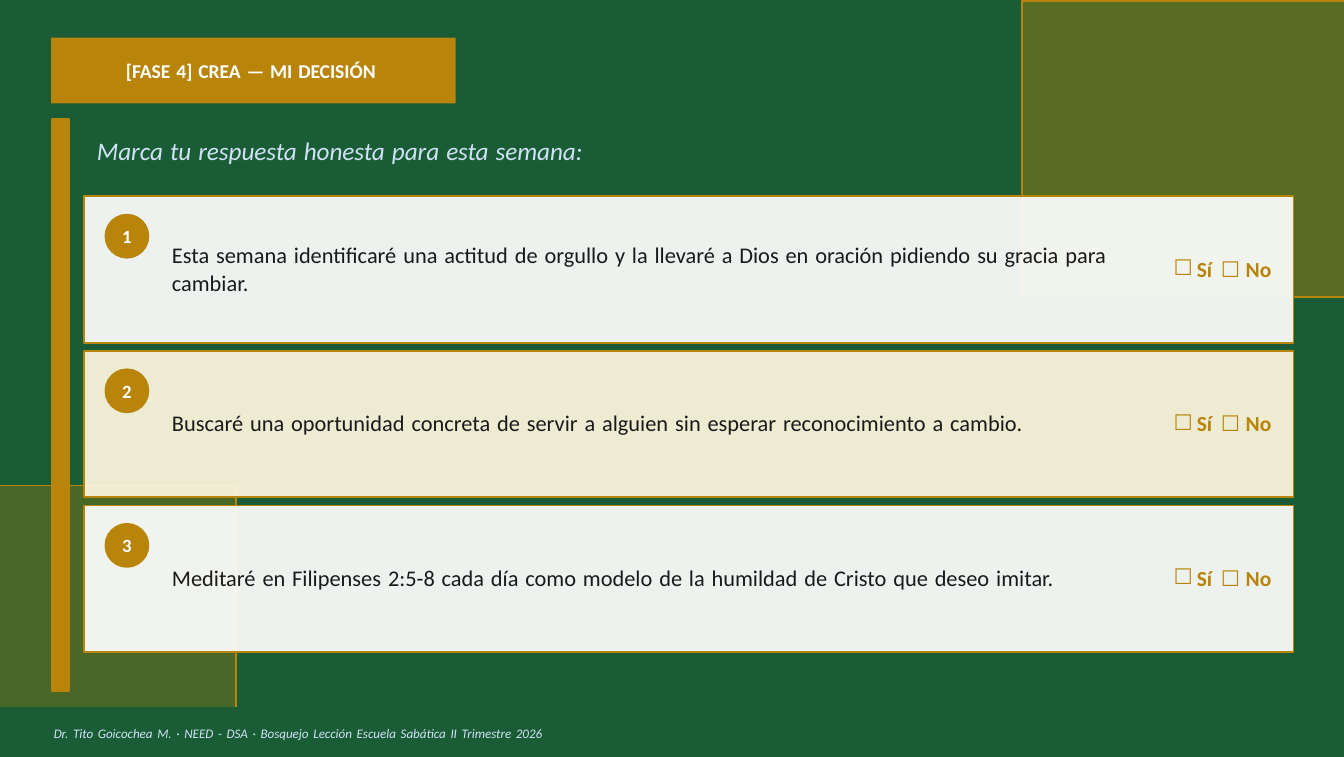
from dataclasses import dataclass

from lxml import etree
from pptx import Presentation
from pptx import util as u
from pptx.dml import color
from pptx.enum import shapes, text
from pptx.oxml import ns

Pt = u.Pt
GREEN, GOLD, WHITE = "1A5C36", "B8850A", "FFFFFF"
ICE, INK, CREAM = "D0E3F5", "1A1A1A", "FFF8E0"
RECT, OVAL = shapes.MSO_SHAPE.RECTANGLE, shapes.MSO_SHAPE.OVAL
LEFT, CENTER = text.PP_ALIGN.LEFT, text.PP_ALIGN.CENTER
SLIDE_W, SLIDE_H = 720, 405.4
CARD_LEFT, CARD_TOP, CARD_W, CARD_H, CARD_PITCH = 45, 105.1, 648, 78.5, 82.8


@dataclass(frozen=True)
class Box:
    left: float
    top: float
    width: float
    height: float

    def lengths(self) -> tuple:
        return Pt(self.left), Pt(self.top), Pt(self.width), Pt(self.height)


@dataclass(frozen=True)
class Commitment:
    number: int
    statement: str
    fill: str


def rgb(value: str) -> color.RGBColor:
    return color.RGBColor.from_string(value)


def add_block(slide, box: Box, fill: str, alpha=100, line=None, kind=RECT):
    block = slide.shapes.add_shape(kind, *box.lengths())
    block.shadow.inherit = False
    block.fill.solid()
    block.fill.fore_color.rgb = rgb(fill)
    if alpha < 100:
        solid = block.fill._xPr.find(ns.qn("a:solidFill"))
        etree.SubElement(solid[0], ns.qn("a:alpha"), val=str(alpha * 1000))
    if line:
        block.line.color.rgb = rgb(line)
        block.line.width = Pt(1)
    else:
        block.line.fill.background()
    return block


def add_outline(slide, points: list) -> None:
    start, *rest = [(Pt(x), Pt(y)) for x, y in points]
    builder = slide.shapes.build_freeform(*start)
    builder.add_line_segments(rest, close=False)
    outline = builder.convert_to_shape()
    outline.shadow.inherit = False
    outline.fill.background()
    outline.line.color.rgb = rgb(GOLD)
    outline.line.width = Pt(1)


def add_run(paragraph, words: str, *, size, ink, bold=False, italic=False,
            font="Calibri", spacing=0) -> None:
    run = paragraph.add_run()
    run.text = words
    run.font.name = font
    run.font.size = Pt(size)
    run.font.bold = bold
    run.font.italic = italic
    run.font.color.rgb = rgb(ink)
    if spacing:
        run.font._element.set("spc", str(round(spacing * 100)))


def prepare_frame(holder, indent=0, wrap=True):
    frame = holder.text_frame
    frame.margin_left = Pt(indent)
    frame.margin_top = frame.margin_right = frame.margin_bottom = 0
    frame.word_wrap = wrap
    frame.vertical_anchor = text.MSO_ANCHOR.MIDDLE
    return frame


def write(holder, words: str, *, align=LEFT, indent=0, gap=0.9, leading=None, **style) -> None:
    paragraph = prepare_frame(holder, indent).paragraphs[0]
    paragraph.alignment = align
    if leading:
        paragraph.line_spacing = Pt(leading)
    for position, word in enumerate(words.split(" ")):
        if position:
            add_run(paragraph, " ", spacing=gap, **style)
        add_run(paragraph, word, **style)


def add_answer(slide, box: Box) -> None:
    answer = slide.shapes.add_textbox(*box.lengths())
    paragraph = prepare_frame(answer, wrap=False).paragraphs[0]
    properties = paragraph._p.get_or_add_pPr()
    properties.set("marL", str(Pt(13.5)))
    properties.set("indent", str(Pt(-12.5)))
    etree.SubElement(properties, ns.qn("a:buFont"), typeface="Karla")
    etree.SubElement(properties, ns.qn("a:buChar"), char="☐")
    tabs = etree.SubElement(properties, ns.qn("a:tabLst"))
    etree.SubElement(tabs, ns.qn("a:tab"), pos=str(Pt(13.5)), algn="l")
    style = dict(size=11.5, ink=GOLD, bold=True)
    add_run(paragraph, "Sí", **style)
    add_run(paragraph, " ", spacing=2, **style)
    add_run(paragraph, "☐ ", font="Karla", **style)
    add_run(paragraph, "No", **style)


def add_commitment(slide, commitment: Commitment) -> None:
    top = CARD_TOP + CARD_PITCH * (commitment.number - 1)
    add_block(slide, Box(CARD_LEFT, top, CARD_W, CARD_H), commitment.fill, 92, GOLD)
    badge = add_block(slide, Box(56.5, top + 9.9, 23, 23), GOLD, line=GOLD, kind=OVAL)
    write(badge, str(commitment.number), align=CENTER, size=10, ink=WHITE, bold=True)
    statement = slide.shapes.add_textbox(*Box(91.4, top - 0.9, 514, CARD_H).lengths())
    write(statement, commitment.statement, indent=0.7, leading=15, size=12, ink=INK)
    add_answer(slide, Box(627.7, top - 0.5, 55, CARD_H))


def main() -> None:
    deck = Presentation()
    deck.slide_width, deck.slide_height = Pt(SLIDE_W), Pt(SLIDE_H)
    slide = deck.slides.add_slide(deck.slide_layouts[6])
    slide.background.fill.solid()
    slide.background.fill.fore_color.rgb = rgb(GREEN)

    add_block(slide, Box(547.6, 0, 172.4, 159), GOLD, 40)
    add_outline(slide, [(SLIDE_W, 0.3), (547.6, 0.3), (547.6, 159)])
    add_outline(slide, [(CARD_LEFT + CARD_W, 159), (SLIDE_W, 159)])
    add_block(slide, Box(0, 260, 126.4, 118.7), GOLD, 30)
    add_outline(slide, [(126.4, SLIDE_H), (126.4, 260), (0, 260)])
    add_block(slide, Box(28, 63.9, 9.1, 306.2), GOLD, line=GOLD)

    phase = add_block(slide, Box(27.4, 20.2, 216.8, 35.2), GOLD)
    write(phase, "[FASE 4] CREA — MI DECISIÓN", indent=40, gap=0.8,
          size=10.5, ink=WHITE, bold=True)
    prompt = slide.shapes.add_textbox(*Box(51.2, 70.5, 300, 20).lengths())
    write(prompt, "Marca tu respuesta honesta para esta semana:",
          indent=0.7, gap=0.7, size=13.5, ink=ICE, italic=True)

    commitments = [
        Commitment(1, "Esta semana identificaré una actitud de orgullo y la llevaré a Dios "
                      "en oración pidiendo su gracia para cambiar.", WHITE),
        Commitment(2, "Buscaré una oportunidad concreta de servir a alguien sin esperar "
                      "reconocimiento a cambio.", CREAM),
        Commitment(3, "Meditaré en Filipenses 2:5-8 cada día como modelo de la humildad "
                      "de Cristo que deseo imitar.", WHITE),
    ]
    for commitment in commitments:
        add_commitment(slide, commitment)

    add_block(slide, Box(0, 378.7, SLIDE_W, SLIDE_H - 378.7), GREEN)
    credit = slide.shapes.add_textbox(*Box(28.1, 388, 320, 9.4).lengths())
    write(credit, "Dr. Tito Goicochea M. · NEED - DSA · Bosquejo Lección Escuela Sabática "
                  "II Trimestre 2026", indent=0.7, size=7, ink=ICE, italic=True)
    deck.save("out.pptx")


if __name__ == "__main__":
    main()
